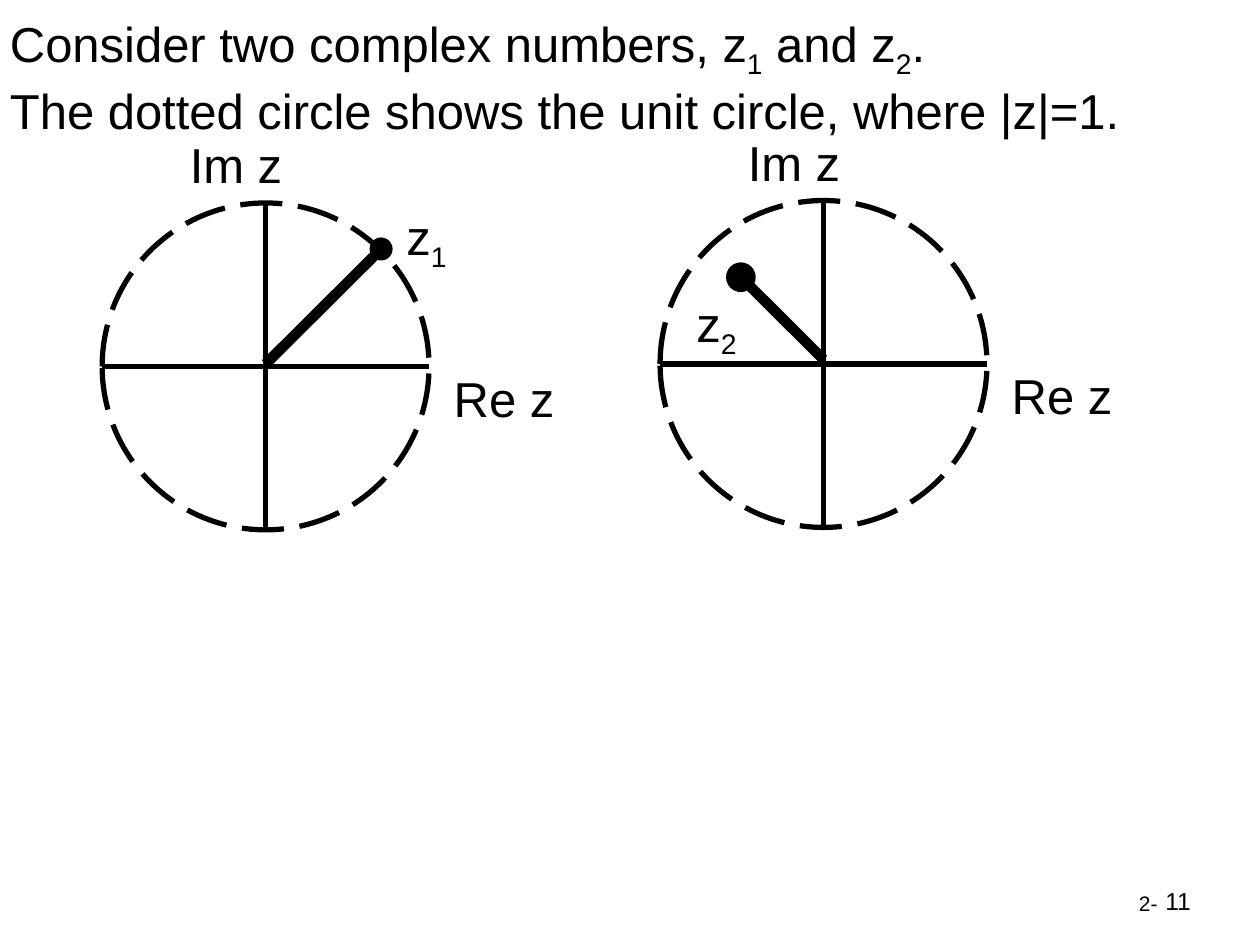
import pptx
import pptx.util
import pptx.dml.color
import pptx.enum.dml
import pptx.enum.shapes
import pptx.enum.text
import lxml.etree

Pt = pptx.util.Pt
COLORS = {"ink": "000000", "paper": "FFFFFF"}
FONT = "Arial"
BODY = 28

# Content: a line is a list of (text, is_subscript); lengths in points
INTRO = [
    [("Consider two complex numbers, z", False), ("1", True),
     (" and z", False), ("2", True), (".", False)],
    [("The dotted circle shows the unit circle, where |z|=1.", False)],
]
RADIUS = 93.4
PLANES = [
    {"center": (151.8, 209.4), "start": (151.8, 208), "point": (217.8, 142.3),
     "dot": 12.2, "turn": 0, "label": "1", "label_at": (225.2, 114.6)},
    {"center": (470.6, 208), "start": (470.6, 205.4), "point": (423.4, 158.4),
     "dot": 16, "turn": 270, "label": "2", "label_at": (390.9, 164.2)},
]
# Axis names: text, offset from the circle's center, width
AXIS_NAMES = [("Im z", (-50.4, -135.9), 68.4), ("Re z", (100.4, -2.6), 73.4)]
LABEL_HEIGHT = 41

deck = pptx.Presentation()
deck.slide_width, deck.slide_height = Pt(720), Pt(540)
slide = deck.slides.add_slide(deck.slide_layouts[6])


def rgb(name):
    return pptx.dml.color.RGBColor.from_string(COLORS[name])


def add_text(lines, left, top, width, height, size=BODY, wrap=True, right=False):
    box = slide.shapes.add_textbox(Pt(left), Pt(top), Pt(width), Pt(height))
    box.text_frame.word_wrap = wrap
    paragraph = box.text_frame.paragraphs[0]
    align = pptx.enum.text.PP_ALIGN
    paragraph.alignment = align.RIGHT if right else align.LEFT
    for number, line in enumerate(lines):
        if number:
            paragraph.add_line_break()
        for text, subscript in line:
            run = paragraph.add_run()
            run.text = text
            run.font.name, run.font.size = FONT, Pt(size)
            run.font.color.rgb = rgb("ink")
            if subscript:
                run._r.get_or_add_rPr().set("baseline", "-25000")


def add_line(start, end, weight):
    line = slide.shapes.add_connector(
        pptx.enum.shapes.MSO_CONNECTOR.STRAIGHT, *map(Pt, (*start, *end)))
    line.line.color.rgb = rgb("ink")
    line.line.width = Pt(weight)
    properties = line._element.spPr
    lxml.etree.SubElement(properties, pptx.oxml.ns.qn("a:effectLst"))


def add_circle(center, radius, weight):
    x, y = center
    circle = slide.shapes.add_shape(
        pptx.enum.shapes.MSO_SHAPE.OVAL,
        *map(Pt, (x - radius, y - radius, 2 * radius, 2 * radius)))
    circle.shadow.inherit = False
    circle.fill.background()
    circle.line.color.rgb = rgb("ink")
    circle.line.width = Pt(weight)
    return circle


# Background, page number and introduction
slide.background.fill.solid()
slide.background.fill.fore_color.rgb = rgb("paper")
add_text([[("2-", False)]], 643.7, 505.4, 34.6, 21.6, size=12)
add_text([[("11", False)]], 519.8, 502.6, 167.8, 37.4, size=14, right=True)
add_text(INTRO, -1.4, 4.3, 702.7, 74.9)

for plane in PLANES:
    x, y = plane["center"]

    # Unit circle and axes
    unit_circle = add_circle(plane["center"], RADIUS, 3)
    unit_circle.line.dash_style = pptx.enum.dml.MSO_LINE.LONG_DASH
    add_line((x, y - RADIUS), (x, y + RADIUS), 3)
    add_line((x - RADIUS, y), (x + RADIUS, y), 3)
    for name, (dx, dy), width in AXIS_NAMES:
        add_text([[(name, False)]], x + dx, y + dy, width, LABEL_HEIGHT, wrap=False)

    # Complex number
    add_line(plane["start"], plane["point"], 6)
    dot = add_circle(plane["point"], plane["dot"] / 2, 1)
    dot.fill.solid()
    dot.fill.fore_color.rgb = rgb("ink")
    dot.rotation = plane["turn"]
    add_text([[("z", False), (plane["label"], True)]],
             *plane["label_at"], 38.9, LABEL_HEIGHT, wrap=False)

deck.save("out.pptx")
